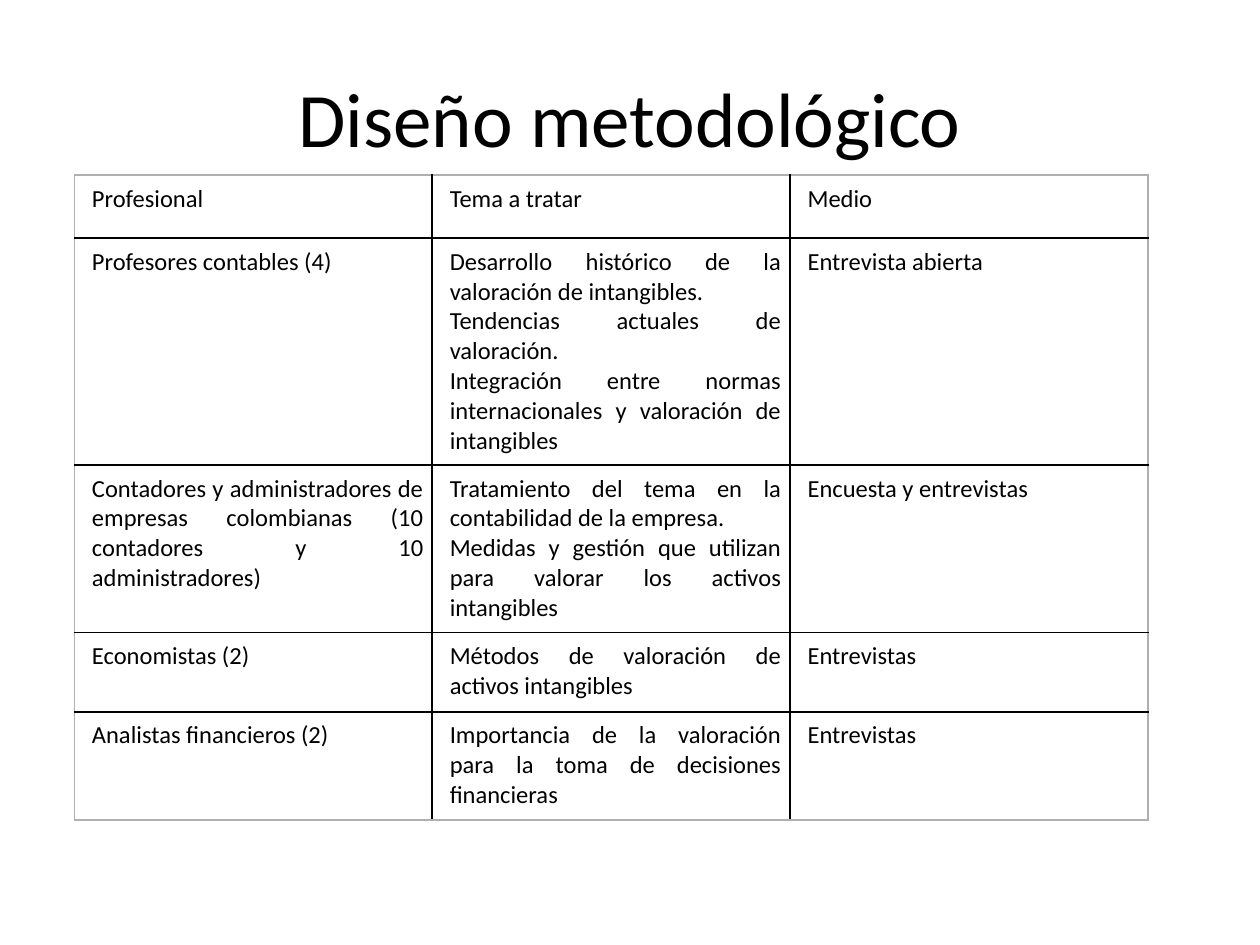
"""Build the slide on the methodological design, with its table of interviews."""
from typing import NamedTuple

from lxml.etree import SubElement as Sub
from pptx import Presentation
from pptx.dml.color import RGBColor
from pptx.enum.text import MSO_ANCHOR as Anchor, PP_ALIGN as Align
from pptx.oxml.ns import qn
from pptx.util import Inches, Pt

BLACK, GREY = "000000", "B0B0B0"
PAD = 0.07


class Row(NamedTuple):
    high: float
    who: str
    theme: str
    means: str


ROWS = [
    Row(0.5, "Profesional", "Tema a tratar", "Medio"),
    Row(1.8, "Profesores contables (4)",
        "Desarrollo histórico de la valoración de intangibles.\n"
        "Tendencias actuales de valoración.\n"
        "Integración entre normas internacionales y valoración de intangibles",
        "Entrevista abierta"),
    Row(1.33, "Contadores y administradores de empresas colombianas "
        "(10 contadores y 10 administradores)",
        "Tratamiento del tema en la contabilidad de la empresa.\n"
        "Medidas y gestión que utilizan para valorar los activos intangibles",
        "Encuesta y entrevistas"),
    Row(0.63, "Economistas (2)", "Métodos de valoración de activos intangibles",
        "Entrevistas"),
    Row(0.86, "Analistas financieros (2)",
        "Importancia de la valoración para la toma de decisiones financieras",
        "Entrevistas"),
]


def tint(color, tone: str) -> None:
    """Set a colour from a hex string."""
    color.rgb = RGBColor.from_string(tone)


def write(frame, text: str, *, size: float, align, tone: str = BLACK,
          indent: float = 0) -> None:
    """Fill a text frame, one paragraph for each line."""
    frame.text = text
    for para in frame.paragraphs:
        para.alignment = align
        if indent:
            props = para._p.get_or_add_pPr()
            props.set("marL", str(Inches(indent)))
            props.set("indent", "0")
        font = para.runs[0].font
        font.name, font.size = "Calibri", Pt(size)
        tint(font.color, tone)


def edge(cell, side: str, tone: str, width: float = 1) -> None:
    """Draw one border of a cell."""
    line = Sub(cell._tc.get_or_add_tcPr(), qn(f"a:ln{side}"), w=str(Pt(width)))
    Sub(Sub(line, qn("a:solidFill")), qn("a:srgbClr"), val=tone)


def draw_title(slide, text: str) -> None:
    """Place and format the title."""
    title = slide.shapes.title
    title.left, title.top = Inches(0.5), Inches(0.3)
    title.width, title.height = Inches(9), Inches(1.25)
    title.text_frame.vertical_anchor = Anchor.MIDDLE
    write(title.text_frame, text, size=44, align=Align.CENTER)


def draw_table(slide, rows: list[Row], left: float, top: float,
               wide: float) -> None:
    """Draw the table with grey outer and black inner borders."""
    count, cols = len(rows), 3
    high = sum(row.high for row in rows)
    table = slide.shapes.add_table(count, cols, Inches(left), Inches(top),
                                   Inches(wide * cols), Inches(high)).table
    table.first_row = table.horz_banding = False
    for col in table.columns:
        col.width = Inches(wide)
    for r, row in enumerate(rows):
        table.rows[r].height = Inches(row.high)
        for c, text in enumerate(row[1:]):
            cell = table.cell(r, c)
            cell.margin_left = cell.margin_right = Inches(PAD)
            cell.margin_top = cell.margin_bottom = Inches(PAD)
            write(cell.text_frame, text, size=14, align=Align.JUSTIFY, indent=PAD)
            outer = {"L": c == 0, "R": c == cols - 1,
                     "T": r == 0, "B": r == count - 1}
            for side, rim in outer.items():
                edge(cell, side, GREY if rim else BLACK)
            cell.fill.background()


def main() -> None:
    """Build and save the slide."""
    deck = Presentation()
    deck.slide_width, deck.slide_height = Inches(10), Inches(7.5)
    slide = deck.slides.add_slide(deck.slide_layouts[5])
    draw_title(slide, "Diseño metodológico")
    draw_table(slide, ROWS, 0.59, 1.39, 2.84)
    deck.save("out.pptx")


if __name__ == "__main__":
    main()
